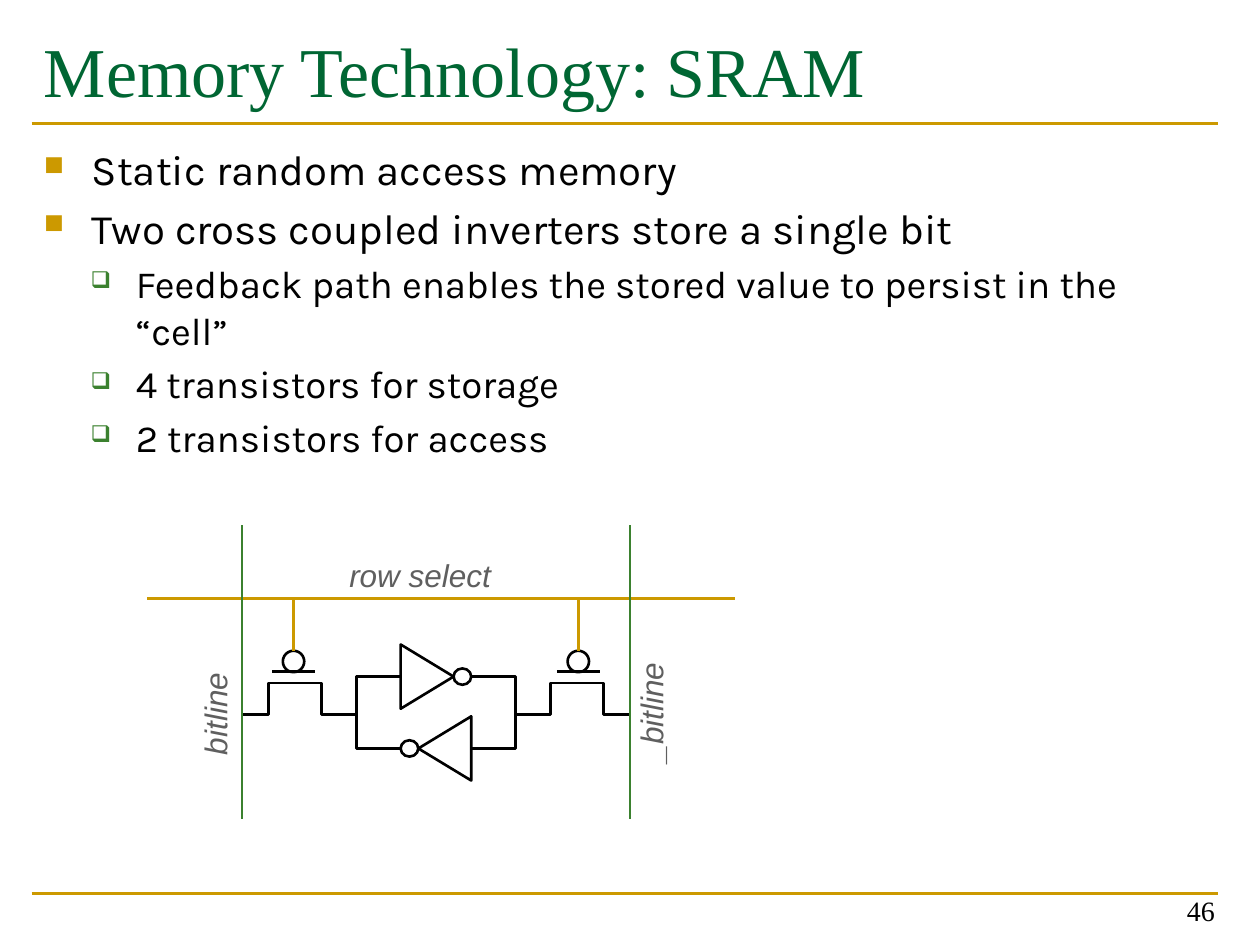
from lxml.etree import SubElement
from pptx import Presentation
from pptx.dml.color import RGBColor
from pptx.enum.shapes import MSO_CONNECTOR, MSO_SHAPE
from pptx.enum.text import MSO_ANCHOR, PP_ALIGN
from pptx.oxml.ns import qn
from pptx.util import Inches, Pt

COLORS = {
    "gold": "CC9900",
    "green": "3B812F",
    "title": "006633",
    "ink": "000000",
    "gray": "5F5F5F",
}
LEVELS = [
    {"mark": "■", "color": "gold", "scale": "65000", "size": 24,
     "left": 0.38, "hang": -0.38, "gap": 4.8},
    {"mark": "❑", "color": "green", "scale": "60000", "size": 22,
     "left": 0.73, "hang": -0.36, "gap": 4.4},
]
POINTS = [
    (0, "Static random access memory"),
    (0, "Two cross coupled inverters store a single bit"),
    (1, "Feedback path enables the stored value to persist in the “cell”"),
    (1, "4 transistors for storage"),
    (1, "2 transistors for access"),
]
MID = 3.46


def color(name):
    return RGBColor.from_string(COLORS[name])


def set_font(font, face, size, tint):
    font.name = face
    font.size = Pt(size)
    font.color.rgb = color(tint)


def add_line(slide, x1, y1, x2, y2, tint):
    line = slide.shapes.add_connector(
        MSO_CONNECTOR.STRAIGHT, Inches(x1), Inches(y1), Inches(x2), Inches(y2))
    line.line.color.rgb = color(tint)
    line.line.width = Pt(1.5)
    SubElement(line._element.spPr, qn("a:effectLst"))


def set_outline(shape):
    shape.shadow.inherit = False
    shape.fill.background()
    shape.line.color.rgb = color("ink")
    shape.line.width = Pt(1.5)


def add_part(slide, kind, x, y, w, h, turn=0):
    part = slide.shapes.add_shape(
        kind, Inches(x - w / 2), Inches(y - h / 2), Inches(w), Inches(h))
    part.rotation = turn
    set_outline(part)


def add_wire(slide, points):
    start, *rest = [(Inches(x), Inches(y)) for x, y in points]
    pen = slide.shapes.build_freeform(*start)
    pen.add_line_segments(rest, close=False)
    set_outline(pen.convert_to_shape())


def add_text(slide, x, y, w, h, text, face, size, tint, wrap=True):
    box = slide.shapes.add_textbox(Inches(x), Inches(y), Inches(w), Inches(h))
    frame = box.text_frame
    frame.word_wrap = wrap
    frame.text = text
    set_font(frame.paragraphs[0].runs[0].font, face, size, tint)
    return box


def add_label(slide, x, y, w, text, turn=0):
    box = add_text(slide, x, y, w, 0.37, text, "Arial", 18, "gray", False)
    box.rotation = turn
    para = box.text_frame.paragraphs[0]
    para.alignment = PP_ALIGN.CENTER
    para.line_spacing = 0.9
    para.runs[0].font.italic = True


def add_bullet(para, level):
    props = para._p.get_or_add_pPr()
    props.set("marL", str(Inches(level["left"])))
    props.set("indent", str(Inches(level["hang"])))
    tint = SubElement(props, qn("a:buClr"))
    SubElement(tint, qn("a:srgbClr"), val=COLORS[level["color"]])
    SubElement(props, qn("a:buSzPct"), val=level["scale"])
    SubElement(props, qn("a:buChar"), char=level["mark"])


def add_list(slide):
    box = slide.shapes.add_textbox(
        Inches(0.25), Inches(1.09), Inches(9.42), Inches(5.68))
    frame = box.text_frame
    frame.word_wrap = True
    for i, (depth, text) in enumerate(POINTS):
        para = frame.paragraphs[0] if i == 0 else frame.add_paragraph()
        level = LEVELS[depth]
        para.text = text
        para.level = depth
        add_bullet(para, level)
        if i:
            para.space_before = Pt(level["gap"])
        set_font(para.runs[0].font, "Karla", level["size"], "ink")


def add_latch(slide):
    for side, y, turn in ((1, 5.37, 90), (-1, 5.94, 270)):
        add_part(slide, MSO_SHAPE.ISOSCELES_TRIANGLE,
                 MID - side * 0.07, y, 0.51, 0.42, turn)
        add_part(slide, MSO_SHAPE.OVAL, MID + side * 0.21, y, 0.14, 0.13)
        near, far = MID + side * 0.28, MID + side * 0.63
        add_wire(slide, [(near, 5.37), (far, 5.37), (far, 5.94), (near, 5.94)])


def add_access(slide, side):
    steps = [(1.54, 5.67), (1.33, 5.67), (1.33, 5.42),
             (0.91, 5.42), (0.91, 5.67), (0.63, 5.67)]
    add_wire(slide, [(MID + side * dx, y) for dx, y in steps])
    gate = MID + side * 1.13
    add_line(slide, gate - 0.17, 5.33, gate + 0.17, 5.33, "ink")
    add_part(slide, MSO_SHAPE.OVAL, gate, 5.25, 0.17, 0.17)
    add_line(slide, gate, 4.75, gate, 5.17, "gold")
    rail = MID + side * 1.54
    add_line(slide, rail, 4.17, rail, 6.5, "green")


def main():
    deck = Presentation()
    deck.slide_width = Inches(10)
    deck.slide_height = Inches(7.5)
    slide = deck.slides.add_slide(deck.slide_layouts[6])

    for y in (7.09, 0.98):
        add_line(slide, 0.25, y, 9.67, y, "gold")
    add_list(slide)
    add_text(slide, 0.25, 0.17, 9.42, 1.17, "Memory Technology: SRAM",
             "Times New Roman", 40, "title")
    page = add_text(slide, 7.41, 6.91, 2.33, 0.5, "46",
                    "Times New Roman", 16, "ink")
    page.text_frame.vertical_anchor = MSO_ANCHOR.BOTTOM
    page.text_frame.paragraphs[0].alignment = PP_ALIGN.RIGHT

    add_latch(slide)
    add_line(slide, 1.17, 4.75, 5.83, 4.75, "gold")
    for side in (-1, 1):
        add_access(slide, side)
    add_label(slide, 2.67, 4.4, 1.33, "row select")
    add_label(slide, 1.3, 5.48, 0.85, "bitline", 270)
    add_label(slide, 4.69, 5.47, 0.99, "_bitline", 270)
    deck.save("out.pptx")


if __name__ == "__main__":
    main()
